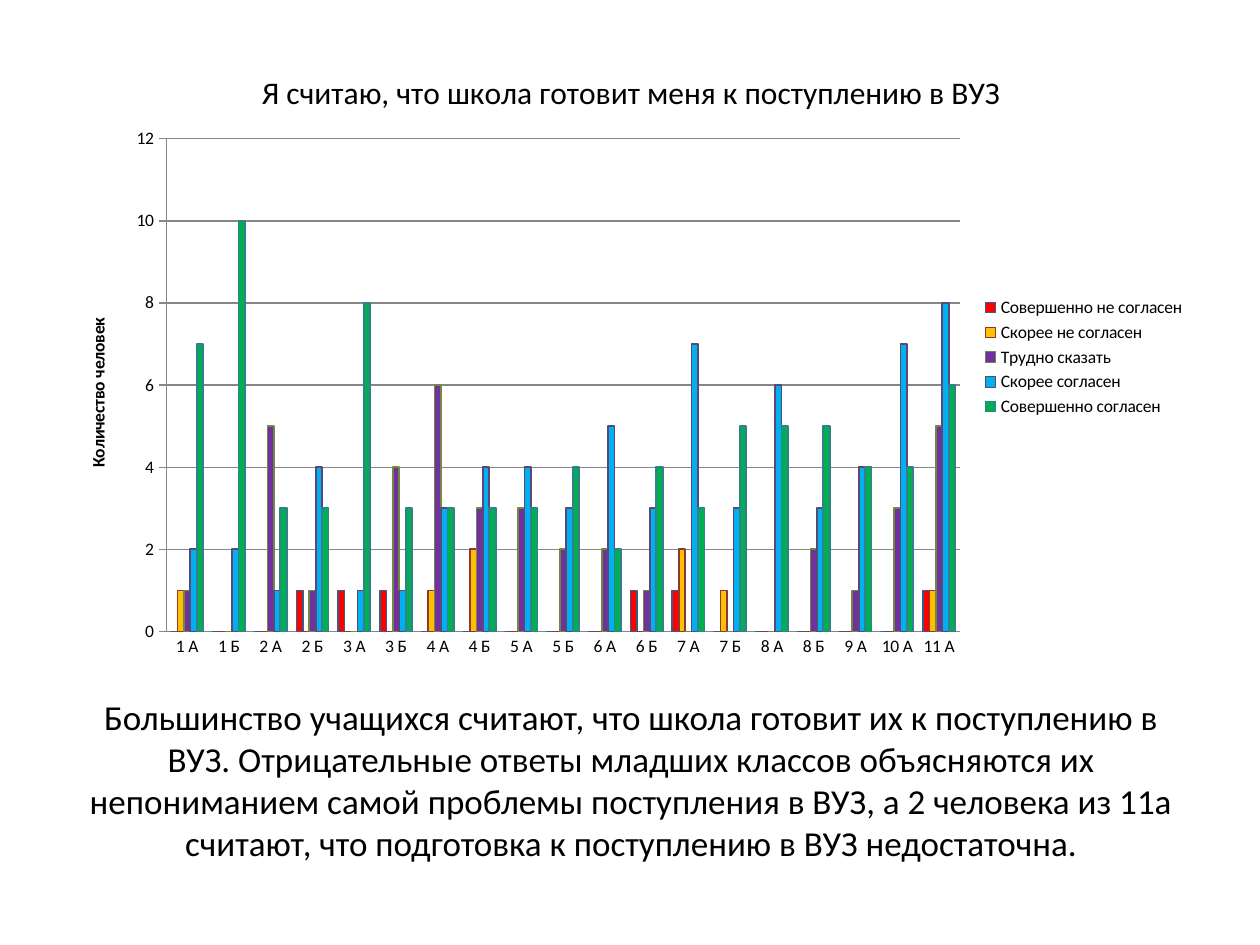
from pptx import Presentation
from pptx.chart.data import CategoryChartData as ChartData
from pptx.dml.color import RGBColor
from pptx.enum.chart import XL_CHART_TYPE as Kind, XL_LEGEND_POSITION as Side
from pptx.enum.chart import XL_TICK_MARK as Tick
from pptx.enum.text import MSO_ANCHOR as Anchor, PP_ALIGN as Align
from pptx.oxml import parse_xml
from pptx.oxml.ns import nsdecls
from pptx.util import Inches, Pt


def color(code):
    return RGBColor.from_string(code)


def style(font, size, bold=False):
    font.name = "Calibri"
    font.size = Pt(size)
    font.bold = bold
    font.color.rgb = color("000000")


prs = Presentation()
prs.slide_width, prs.slide_height = Inches(10), Inches(7.5)
slide = prs.slides.add_slide(prs.slide_layouts[6])

# Answers per class: name, fill, outline, counts
cats = ["1 А", "1 Б", "2 А", "2 Б", "3 А", "3 Б", "4 А", "4 Б", "5 А", "5 Б",
        "6 А", "6 Б", "7 А", "7 Б", "8 А", "8 Б", "9 А", "10 А", "11 А"]
rows = [
    ("Совершенно не согласен", "FF0000", "385D8A",
     [0, 0, 0, 1, 1, 1, 0, 0, 0, 0, 0, 1, 1, 0, 0, 0, 0, 0, 1]),
    ("Скорее не согласен", "FFC000", "8C3836",
     [1, 0, 0, 0, 0, 0, 1, 2, 0, 0, 0, 0, 2, 1, 0, 0, 0, 0, 1]),
    ("Трудно сказать", "7030A0", "71893F",
     [1, 0, 5, 1, 0, 4, 6, 3, 3, 2, 2, 1, 0, 0, 0, 2, 1, 3, 5]),
    ("Скорее согласен", "00B0F0", "5C4776",
     [2, 2, 1, 4, 1, 1, 3, 4, 4, 3, 5, 3, 7, 3, 6, 3, 4, 7, 8]),
    ("Совершенно согласен", "00B050", "357D91",
     [7, 10, 3, 3, 8, 3, 3, 3, 3, 4, 2, 4, 3, 5, 5, 5, 4, 4, 6]),
]
data = ChartData()
data.categories = cats
for name, fill, edge, vals in rows:
    data.add_series(name, vals)

# Column chart
chart = slide.shapes.add_chart(
    Kind.COLUMN_CLUSTERED, Inches(0.51), Inches(0.36), Inches(9), Inches(4.95), data).chart
style(chart.font, 10)
plot = chart.plots[0]
plot.gap_width = 150
plot.vary_by_categories = False
for bars, (name, fill, edge, vals) in zip(plot.series, rows):
    bars.format.fill.solid()
    bars.format.fill.fore_color.rgb = color(fill)
    bars.format.line.color.rgb = color(edge)
    bars.format.line.width = Pt(1)

# Chart title
chart.has_title = True
head = chart.chart_title.text_frame
head.text = "Я считаю, что школа готовит меня к поступлению в ВУЗ"
style(head.paragraphs[0].font, 18)
chart.chart_title.include_in_layout = False

# Axes and legend
xaxis, yaxis = chart.category_axis, chart.value_axis
xaxis.major_tick_mark = Tick.NONE
yaxis.major_tick_mark = Tick.OUTSIDE
yaxis.minimum_scale, yaxis.maximum_scale, yaxis.major_unit = 0, 12, 2
yaxis.has_major_gridlines = True
for part in (xaxis, yaxis, yaxis.major_gridlines):
    part.format.line.color.rgb = color("868686")
    part.format.line.width = Pt(0.75)
label = yaxis.axis_title.text_frame
label.text = "Количество человек"
style(label.paragraphs[0].font, 10, True)
chart.has_legend = True
chart.legend.position = Side.RIGHT
chart.legend.include_in_layout = False
style(chart.legend.font, 10)

# Fixed plot area, as fractions of the chart
area = plot._element.getparent()
for old in area.findall("{*}layout"):
    area.remove(old)
area.insert(0, parse_xml(
    f'<c:layout {nsdecls("c")}><c:manualLayout><c:layoutTarget val="inner"/>'
    '<c:xMode val="edge"/><c:yMode val="edge"/><c:x val="0.09"/><c:y val="0.15"/>'
    '<c:w val="0.7"/><c:h val="0.79"/></c:manualLayout></c:layout>'))

# Conclusion
box = slide.shapes.add_textbox(Inches(0.51), Inches(5.56), Inches(9), Inches(1.25))
frame = box.text_frame
frame.word_wrap = True
frame.vertical_anchor = Anchor.MIDDLE
frame.text = (
    "Большинство учащихся считают, что школа готовит их к поступлению в ВУЗ. "
    "Отрицательные ответы младших классов объясняются их непониманием самой "
    "проблемы поступления в ВУЗ, а 2 человека из 11а считают, что подготовка "
    "к поступлению в ВУЗ недостаточна.")
para = frame.paragraphs[0]
para.alignment = Align.CENTER
style(para.font, 20)

prs.save("out.pptx")
